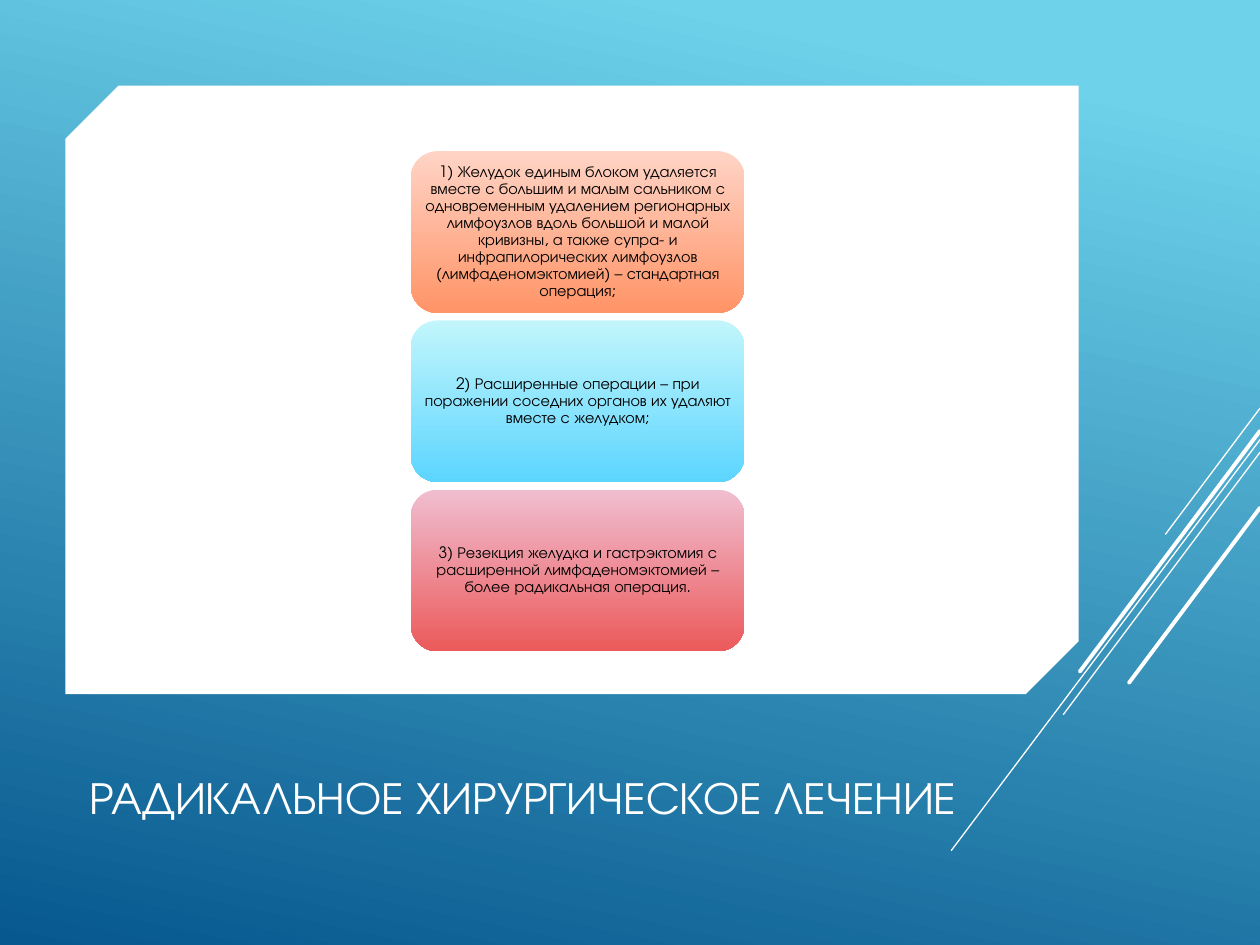
from lxml import etree
from pptx import Presentation
from pptx.dml.color import RGBColor
from pptx.enum import shapes as kinds, text as tx
from pptx.oxml.ns import qn
from pptx.util import Inches, Pt

FONT = "TeX Gyre Adventor"
WHITE = RGBColor(0xFF, 0xFF, 0xFF)
BLACK = RGBColor(0, 0, 0)
SKY = RGBColor(0x6E, 0xD2, 0xEB)
NAVY = RGBColor(0x06, 0x58, 0x8E)
PEACH = RGBColor(0xFF, 0xD4, 0xC6)
ORANGE = RGBColor(0xFF, 0x94, 0x67)
ICE = RGBColor(0xC2, 0xF6, 0xFC)
BLUE = RGBColor(0x5C, 0xD5, 0xFF)
PINK = RGBColor(0xF0, 0xBE, 0xD0)
RED = RGBColor(0xEC, 0x5A, 0x5B)

STEPS = [
    ("1) Желудок единым блоком удаляется вместе с большим и малым сальником с "
     "одновременным удалением регионарных лимфоузлов вдоль большой и малой кривизны, "
     "а также супра- и инфрапилорических лимфоузлов (лимфаденомэктомией) – "
     "стандартная операция;", PEACH, ORANGE),
    ("2) Расширенные операции – при поражении соседних органов их удаляют "
     "вместе с желудком;", ICE, BLUE),
    ("3) Резекция желудка и гастрэктомия с расширенной лимфаденомэктомией – "
     "более радикальная операция.", PINK, RED),
]
RAYS = [
    (10, 3.24, 9.25, 4.24, 0.75),
    (10, 3.49, 7.55, 6.75, 0.75),
    (10, 3.59, 8.44, 5.67, 0.75),
    (10, 3.42, 8.57, 5.33, 2.25),
    (10, 4.03, 8.96, 5.42, 2.25),
]


def add_box(slide, kind, box):
    """Add a plain preset shape without line or shadow."""
    shape = slide.shapes.add_shape(kind, *map(Inches, box))
    shape.shadow.inherit = False
    shape.line.fill.background()
    return shape


def shade(shape, stops, angle):
    """Fill a shape with a two-colour gradient, angle clockwise."""
    shape.fill.gradient()
    shape.fill.gradient_angle = 360 - angle
    for stop, (place, color) in zip(shape.fill.gradient_stops, stops):
        stop.position = place
        stop.color.rgb = color


def write(frame, words, size, color, align):
    """Write one formatted run into a text frame."""
    frame.word_wrap = True
    para = frame.paragraphs[0]
    para.alignment = align
    para.line_spacing = 0.9
    run = para.add_run()
    run.text = words
    run.font.name = FONT
    run.font.size = Pt(size)
    run.font.color.rgb = color


def add_back(slide, box):
    """Draw the shaded backdrop."""
    back = add_box(slide, kinds.MSO_SHAPE.RECTANGLE, box)
    shade(back, [(0.1, SKY), (1, NAVY)], 102)


def add_panel(slide, box):
    """Draw the white panel with two cut corners."""
    panel = add_box(slide, kinds.MSO_SHAPE.SNIP_2_DIAG_RECTANGLE, box)
    panel.adjustments[0] = 0.087
    panel.adjustments[1] = 0
    panel.fill.solid()
    panel.fill.fore_color.rgb = WHITE


def add_rays(slide):
    """Draw the slanted lines at the right edge."""
    for *ends, width in RAYS:
        ray = slide.shapes.add_connector(
            kinds.MSO_CONNECTOR.STRAIGHT, *map(Inches, ends))
        ray.line.color.rgb = WHITE
        ray.line.width = Pt(width)
        ray.line._ln.set("cap", "rnd")
        etree.SubElement(ray._element.spPr, qn("a:effectLst"))


def add_title(slide, box, words):
    """Place the title above the backdrop and write it."""
    title = slide.shapes.title
    title.left, title.top, title.width, title.height = map(Inches, box)
    slide.shapes._spTree.append(title._element)
    frame = title.text_frame
    frame.auto_size = tx.MSO_AUTO_SIZE.NONE
    frame.vertical_anchor = tx.MSO_ANCHOR.BOTTOM
    frame.margin_right = 0
    write(frame, words, 26, WHITE, tx.PP_ALIGN.LEFT)


def add_steps(slide, box, gap):
    """Stack the step cards evenly in the box."""
    left, top, width, height = box
    tall = (height - gap * (len(STEPS) - 1)) / len(STEPS)
    for row, (words, light, dark) in enumerate(STEPS):
        card = add_box(slide, kinds.MSO_SHAPE.ROUNDED_RECTANGLE,
                       (left, top + row * (tall + gap), width, tall))
        shade(card, [(0, light), (1, dark)], 90)
        frame = card.text_frame
        frame.vertical_anchor = tx.MSO_ANCHOR.MIDDLE
        frame.margin_left = frame.margin_right = Inches(0.04)
        frame.margin_top = frame.margin_bottom = Inches(0.02)
        write(frame, words, 9, BLACK, tx.PP_ALIGN.CENTER)


def main():
    """Build and save the slide."""
    deck = Presentation()
    deck.slide_width, deck.slide_height = Inches(10), Inches(7.5)
    slide = deck.slides.add_slide(deck.slide_layouts[5])
    add_back(slide, (0, 0, 10, 7.5))
    add_panel(slide, (0.52, 0.68, 8.04, 4.83))
    add_rays(slide)
    add_title(slide, (0.61, 5.67, 7.14, 0.92), "РАДИКАЛЬНОЕ ХИРУРГИЧЕСКОЕ ЛЕЧЕНИЕ")
    add_steps(slide, (3.26, 1.2, 2.65, 3.97), 0.06)
    deck.save("out.pptx")


if __name__ == "__main__":
    main()
